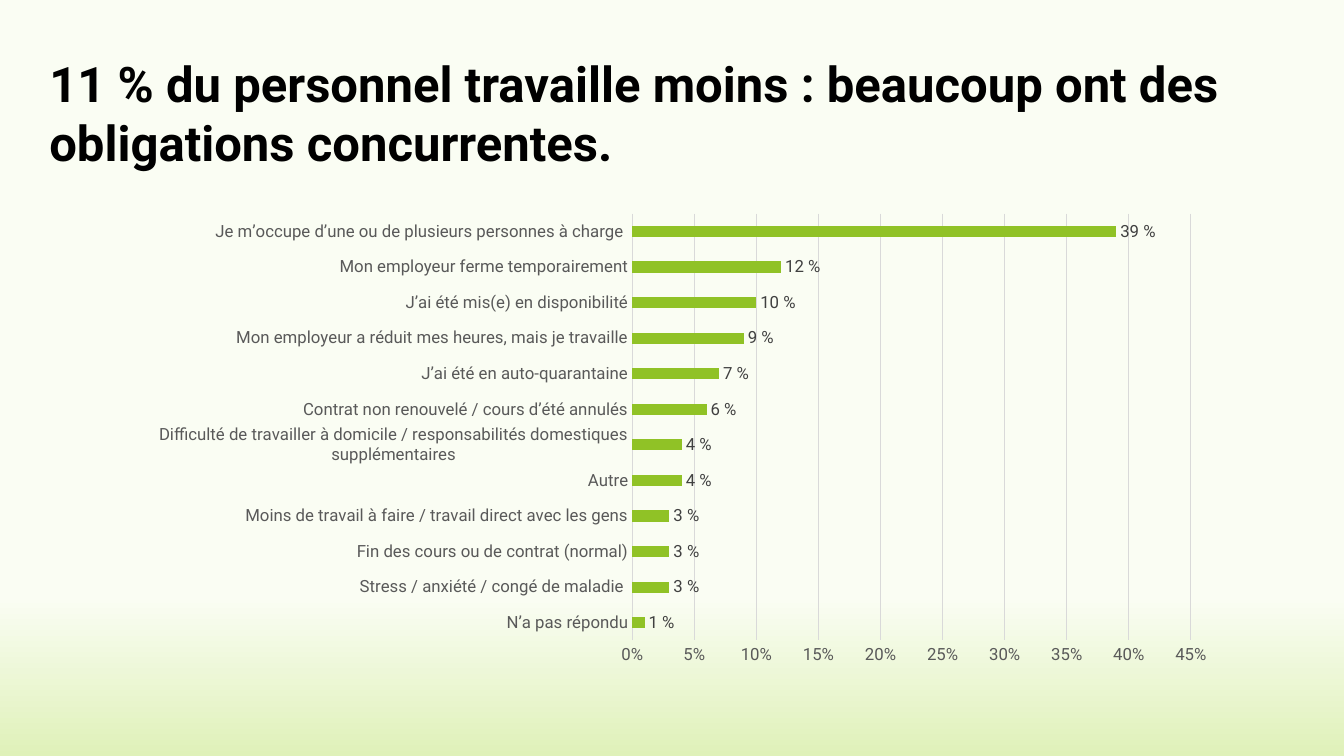
from lxml import etree
from pptx import Presentation
from pptx.chart.data import CategoryChartData
from pptx.dml.color import RGBColor
from pptx.enum.chart import XL_CHART_TYPE as ChartType, XL_LABEL_POSITION as LabelPosition
from pptx.enum.chart import XL_TICK_MARK as TickMark
from pptx.enum.text import MSO_ANCHOR as Anchor, MSO_AUTO_SIZE as AutoSize, PP_ALIGN as Align
from pptx.oxml.ns import qn
from pptx.util import Pt

FONT = "Roboto"
BLACK = RGBColor(0x00, 0x00, 0x00)
LABEL_GREY = RGBColor(0x40, 0x40, 0x40)
AXIS_GREY = RGBColor(0x59, 0x59, 0x59)
LINE_GREY = RGBColor(0xD9, 0xD9, 0xD9)
BAR_GREEN = RGBColor(0x90, 0xC2, 0x26)
PALE_GREEN = RGBColor(0xFA, 0xFD, 0xF3)
SOFT_GREEN = RGBColor(0xDF, 0xF1, 0xB9)

TITLE = "11 % du personnel travaille moins : beaucoup ont des obligations concurrentes."
REASONS = [
    ("N’a pas répondu", 0.01),
    ("Stress / anxiété / congé de maladie ", 0.03),
    ("Fin des cours ou de contrat (normal)", 0.03),
    ("Moins de travail à faire / travail direct avec les gens", 0.03),
    ("Autre", 0.04),
    ("Difficulté de travailler à domicile / responsabilités domestiques supplémentaires", 0.04),
    ("Contrat non renouvelé / cours d’été annulés", 0.06),
    ("J’ai été en auto-quarantaine", 0.07),
    ("Mon employeur a réduit mes heures, mais je travaille", 0.09),
    ("J’ai été mis(e) en disponibilité", 0.1),
    ("Mon employeur ferme temporairement", 0.12),
    ("Je m’occupe d’une ou de plusieurs personnes à charge ", 0.39),
]


def set_font(font, size, color, bold=False):
    font.name = FONT
    font.size = Pt(size)
    font.bold = bold
    font.color.rgb = color


def set_line(line, color, width=0.75):
    line.color.rgb = color
    line.width = Pt(width)


def fill_background(page):
    fill = page.background.fill
    fill.gradient()
    fill.gradient_angle = 270
    stops = ((0.79, PALE_GREEN), (1, SOFT_GREEN))
    for stop, (position, color) in zip(fill.gradient_stops, stops):
        stop.position = position
        stop.color.rgb = color


def write_title(title, text, size, color):
    title.left, title.top, title.width, title.height = Pt(28), Pt(34.5), Pt(903), Pt(68)
    frame = title.text_frame
    frame.word_wrap = True
    frame.auto_size = AutoSize.NONE
    frame.vertical_anchor = Anchor.TOP
    para = frame.paragraphs[0]
    para.alignment = Align.LEFT
    span = para.add_run()
    span.text = text
    set_font(span.font, size, color, bold=True)


def place_plot(chart, **fractions):
    """Fix the inner plot area, as fractions of the chart's size."""
    plot_area = chart._chartSpace.chart.plotArea
    for old in plot_area.findall(qn("c:layout")):
        plot_area.remove(old)
    layout = etree.Element(qn("c:layout"))
    plot_area.insert(0, layout)
    manual = etree.SubElement(layout, qn("c:manualLayout"))
    settings = {"layoutTarget": "inner", "xMode": "edge", "yMode": "edge", **fractions}
    for name, value in settings.items():
        etree.SubElement(manual, qn("c:" + name)).set("val", str(value))


def style_axis(axis):
    axis.major_tick_mark = axis.minor_tick_mark = TickMark.NONE
    set_font(axis.tick_labels.font, 12, AXIS_GREY)


def add_reason_chart(page):
    data = CategoryChartData(number_format="0%")
    data.categories = [reason for reason, _ in REASONS]
    data.add_series("Series 1", [share for _, share in REASONS])
    chart = page.shapes.add_chart(
        ChartType.BAR_CLUSTERED, Pt(99.5), Pt(146), Pt(782.5), Pt(335), data
    ).chart
    chart.has_legend = chart.has_title = False
    set_font(chart.font, 10, BLACK)
    place_plot(chart, x=0.45, y=0.02, w=0.51, h=0.91)

    style_axis(chart.category_axis)
    set_line(chart.category_axis.format.line, LINE_GREY)

    scale = chart.value_axis
    style_axis(scale)
    scale.minimum_scale, scale.maximum_scale, scale.major_unit = 0, 0.45, 0.05
    scale.format.line.fill.background()
    scale.has_major_gridlines = True
    set_line(scale.major_gridlines.format.line, LINE_GREY)
    scale.tick_labels.number_format = "0%"
    scale.tick_labels.number_format_is_linked = False

    plot = chart.plots[0]
    plot.gap_width = 219
    plot.vary_by_categories = False
    bars = plot.series[0]
    bars.format.fill.solid()
    bars.format.fill.fore_color.rgb = BAR_GREEN
    labels = bars.data_labels
    labels.show_value = True
    labels.position = LabelPosition.OUTSIDE_END
    labels.number_format = r"0\ %"
    labels.number_format_is_linked = False
    set_font(labels.font, 12, LABEL_GREY)


def main():
    deck = Presentation()
    deck.slide_width, deck.slide_height = Pt(960), Pt(540)
    page = deck.slides.add_slide(deck.slide_layouts.get_by_name("Title Only"))
    fill_background(page)
    add_reason_chart(page)
    write_title(page.shapes.title, TITLE, 35, BLACK)
    deck.save("out.pptx")


if __name__ == "__main__":
    main()
